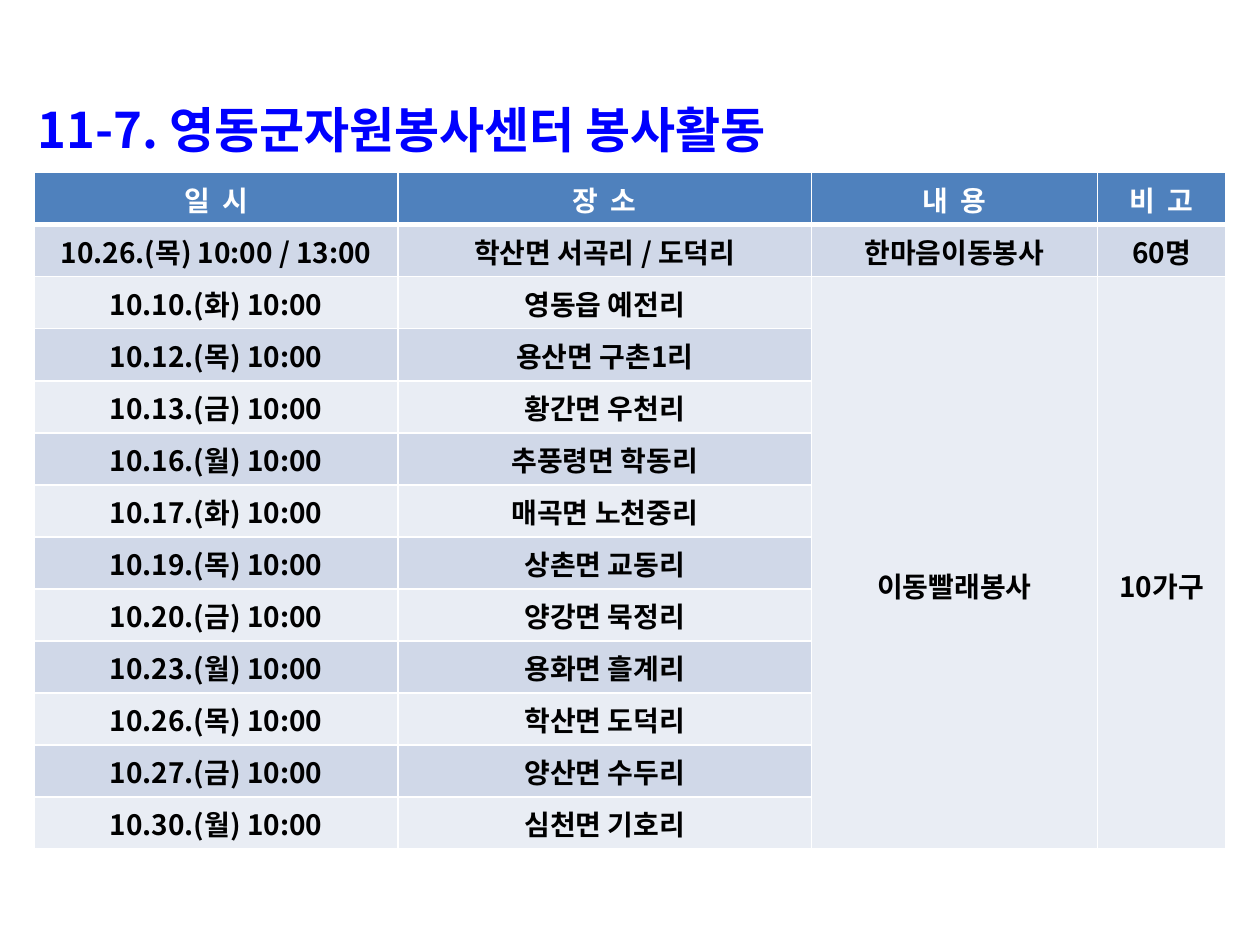
from dataclasses import dataclass

from lxml.etree import SubElement
from pptx import Presentation
from pptx.dml.color import RGBColor
from pptx.enum.text import MSO_ANCHOR, MSO_AUTO_SIZE, PP_ALIGN
from pptx.oxml.ns import qn
from pptx.util import Inches, Pt


@dataclass(frozen=True)
class Theme:
    """Colours, font and type sizes of the slide."""
    font: str = "Noto Sans CJK KR"
    title: str = "0000FF"
    head: str = "4F81BD"
    bands: tuple[str, str] = ("D0D8E8", "E9EDF4")
    light: str = "FFFFFF"
    dark: str = "000000"
    title_pt: int = 28
    body_pt: int = 16


@dataclass(frozen=True)
class Visit:
    """One row of the schedule; note and work may be shared with rows below."""
    when: str
    place: str
    work: str = ""
    note: str = ""


THEME = Theme()
HEADERS = Visit("일 시", "장 소", "내 용", "비 고")
VISITS = [
    Visit("10.26.(목) 10:00 / 13:00", "학산면 서곡리 / 도덕리", "한마음이동봉사", "60명"),
    Visit("10.10.(화) 10:00", "영동읍 예전리", "이동빨래봉사", "10가구"),
    Visit("10.12.(목) 10:00", "용산면 구촌1리"),
    Visit("10.13.(금) 10:00", "황간면 우천리"),
    Visit("10.16.(월) 10:00", "추풍령면 학동리"),
    Visit("10.17.(화) 10:00", "매곡면 노천중리"),
    Visit("10.19.(목) 10:00", "상촌면 교동리"),
    Visit("10.20.(금) 10:00", "양강면 묵정리"),
    Visit("10.23.(월) 10:00", "용화면 흘계리"),
    Visit("10.26.(목) 10:00", "학산면 도덕리"),
    Visit("10.27.(금) 10:00", "양산면 수두리"),
    Visit("10.30.(월) 10:00", "심천면 기호리"),
]
COLUMNS = (2.89, 3.28, 2.27, 1.02)
TABLE_HEIGHT = 5.37


def write(tf, text: str, *, size: int, color: str, align=PP_ALIGN.LEFT,
          line_spacing: float | None = None, tracking: float = 0) -> None:
    """Write one bold paragraph into a text frame."""
    p = tf.paragraphs[0]
    p.alignment = align
    p.line_spacing = line_spacing
    r = p.add_run()
    r.text = text
    r.font.size = Pt(size)
    r.font.bold = True
    r.font.name = THEME.font
    r.font.color.rgb = RGBColor.from_string(color)
    rpr = r.font._element
    SubElement(rpr, qn("a:ea"), typeface=THEME.font)
    if tracking:
        rpr.set("spc", str(round(tracking * 100)))


def set_borders(cell, bottom: float) -> None:
    """Draw white borders with the given bottom width in points."""
    tcpr = cell._tc.get_or_add_tcPr()
    for side, width in (("L", 1), ("R", 1), ("T", 1), ("B", bottom)):
        ln = SubElement(tcpr, qn(f"a:ln{side}"), w=str(Pt(width)))
        fill = SubElement(ln, qn("a:solidFill"))
        SubElement(fill, qn("a:srgbClr"), val=THEME.light)


def style_cell(cell, text: str, *, fill: str, color: str, bottom: float = 1,
               tracking: float = 0) -> None:
    """Fill, border and label one table cell."""
    set_borders(cell, bottom)
    cell.fill.solid()
    cell.fill.fore_color.rgb = RGBColor.from_string(fill)
    if text:
        write(cell.text_frame, text, size=THEME.body_pt, color=color,
              align=PP_ALIGN.CENTER, tracking=tracking)


def add_title(slide, text: str) -> None:
    """Add the slide heading."""
    sp = slide.shapes.add_textbox(Inches(0.2), Inches(0.6), Inches(7.38), Inches(0.71))
    tf = sp.text_frame
    tf.word_wrap = True
    tf.auto_size = MSO_AUTO_SIZE.SHAPE_TO_FIT_TEXT
    write(tf, text, size=THEME.title_pt, color=THEME.title, line_spacing=1.3)


def add_schedule(slide, visits: list[Visit]) -> None:
    """Add the schedule table with its two merged columns."""
    rows = len(visits) + 1
    table = slide.shapes.add_table(
        rows, len(COLUMNS), Inches(0.27), Inches(1.37),
        Inches(sum(COLUMNS)), Inches(TABLE_HEIGHT)).table
    for column, width in zip(table.columns, COLUMNS):
        column.width = Inches(width)
    for row in table.rows:
        row.height = Inches(TABLE_HEIGHT / rows)
    for i, visit in enumerate([HEADERS, *visits]):
        if i == 0:
            look = dict(fill=THEME.head, color=THEME.light, bottom=3, tracking=1.8)
        else:
            look = dict(fill=THEME.bands[(i - 1) % 2], color=THEME.dark)
        for j, text in enumerate((visit.when, visit.place, visit.work, visit.note)):
            style_cell(table.cell(i, j), text, **look)
    for j in (2, 3):
        cell = table.cell(2, j)
        cell.merge(table.cell(rows - 1, j))
        cell.vertical_anchor = MSO_ANCHOR.MIDDLE
        cell.margin_top = Inches(0.4)


def main() -> None:
    """Build and save the slide."""
    prs = Presentation()
    prs.slide_width, prs.slide_height = Inches(10), Inches(7.5)
    slide = prs.slides.add_slide(prs.slide_layouts[6])
    add_title(slide, "11-7. 영동군자원봉사센터 봉사활동")
    add_schedule(slide, VISITS)
    prs.save("out.pptx")


if __name__ == "__main__":
    main()
